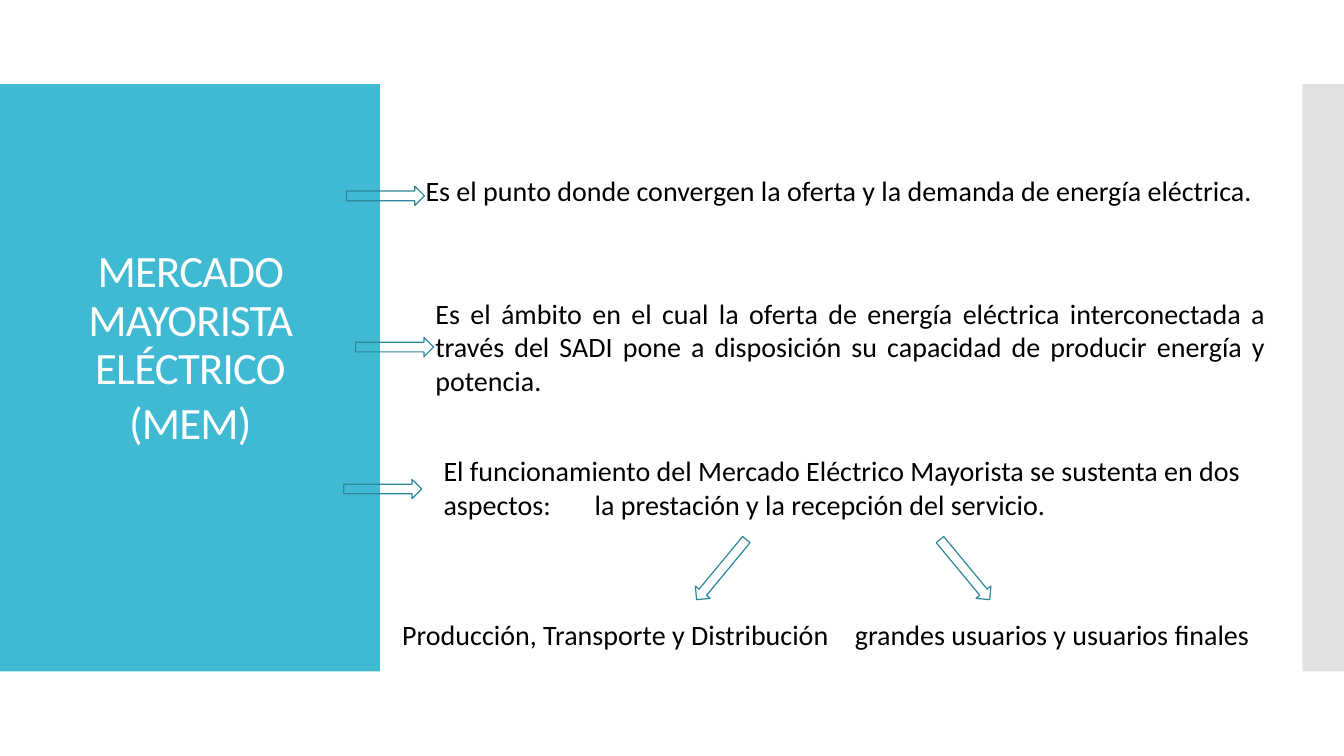
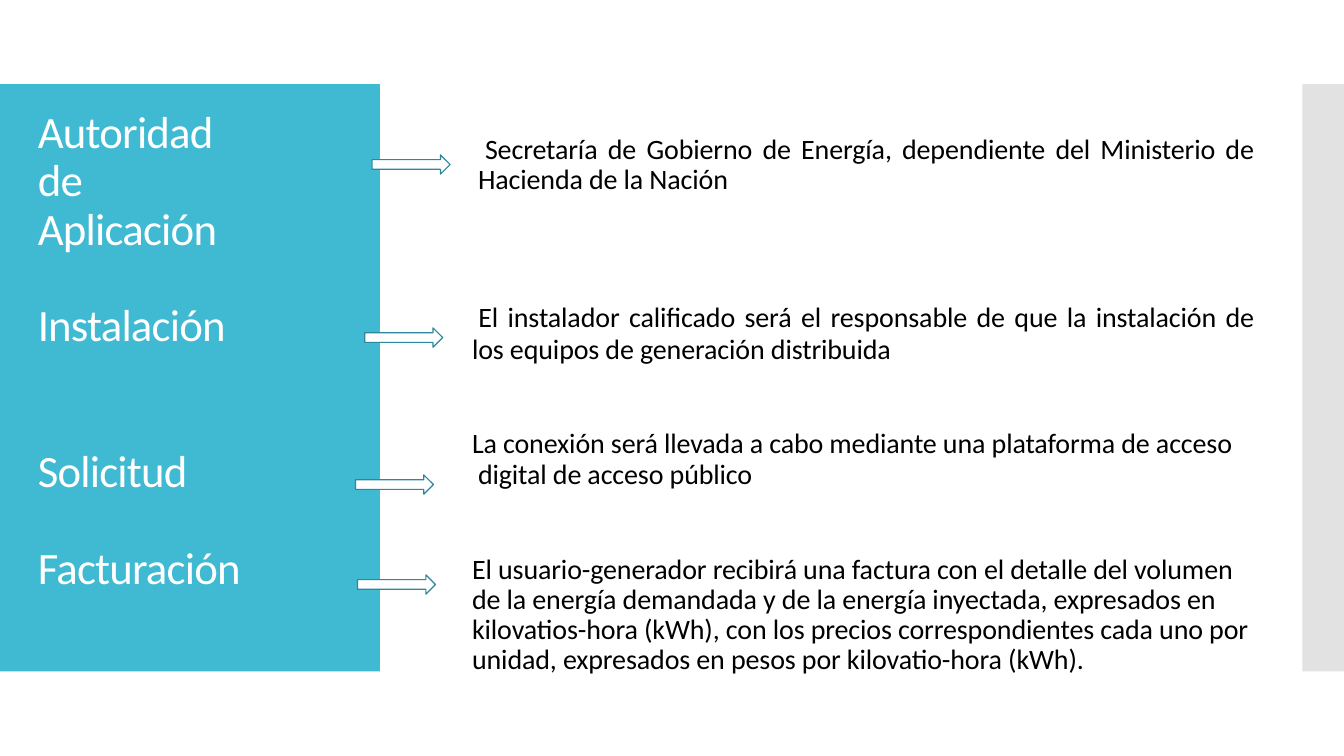
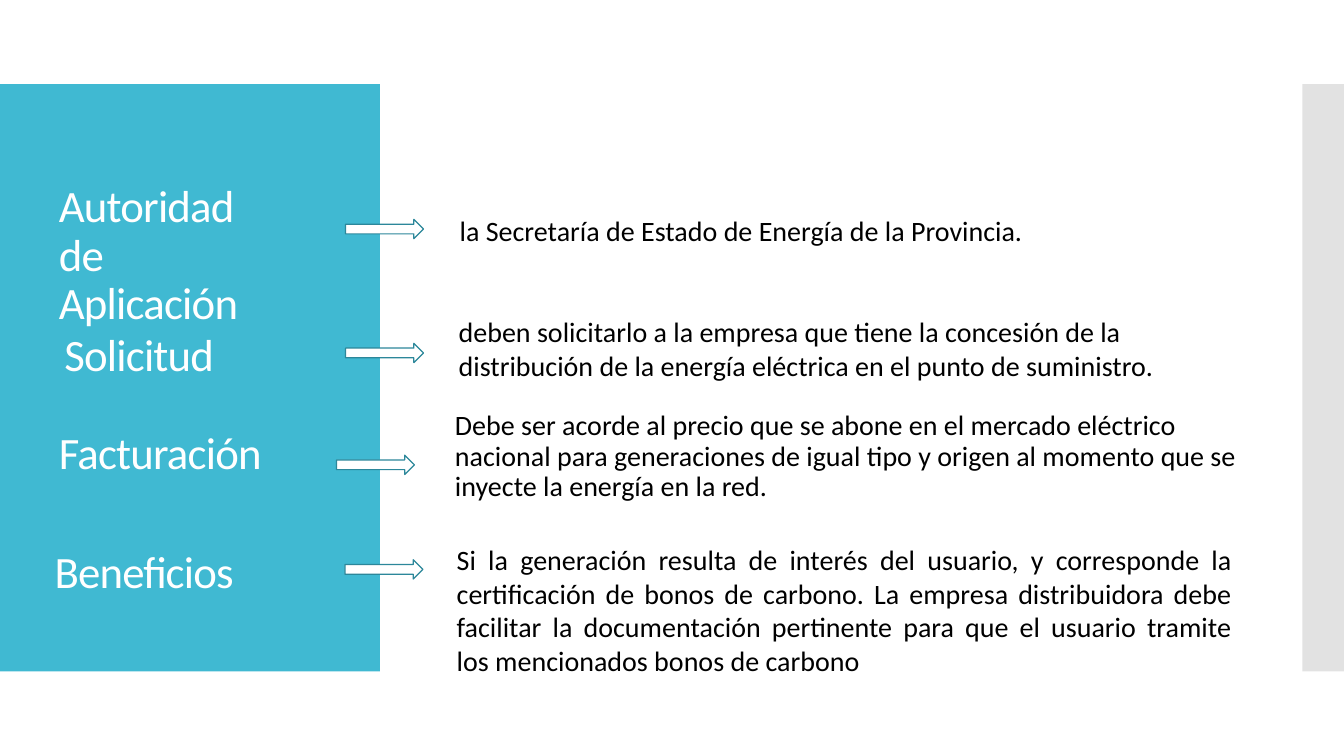
import pptx
import pptx.util
import pptx.dml.color
import pptx.enum.shapes
import pptx.enum.text
import pptx.oxml.ns
from lxml import etree

Pt = pptx.util.Pt
RGBColor = pptx.dml.color.RGBColor
SHAPE = pptx.enum.shapes.MSO_SHAPE
ALIGN = pptx.enum.text.PP_ALIGN
qn = pptx.oxml.ns.qn

TEAL = RGBColor(0x40, 0xB9, 0xD2)
DARK_TEAL = RGBColor(0x2C, 0x87, 0x9A)
GREY = RGBColor(0xC7, 0xC7, 0xC7)
WHITE = RGBColor(0xFF, 0xFF, 0xFF)
BLACK = RGBColor(0, 0, 0)

BAND_TOP, BAND_HEIGHT = 60, 419.5
ARROW_WIDTH, ARROW_HEIGHT = 55.7, 13.8
LABEL = dict(size=32, color=WHITE, spacing=-0.6, leading=Pt(34.6))
TIGHT = dict(leading=Pt(21.6))
JUSTIFIED = dict(align=ALIGN.JUSTIFY)


def add_text(slide, text, x, y, width, height, size=20, color=BLACK, align=ALIGN.LEFT,
             leading=None, before=0, spacing=0, margin=0, indent=0, tab=None):
    frame = slide.shapes.add_textbox(Pt(x), Pt(y), Pt(width), Pt(height)).text_frame
    frame.word_wrap = True
    frame.margin_left = frame.margin_top = frame.margin_right = frame.margin_bottom = 0
    frame.text = text
    for paragraph in frame.paragraphs:
        paragraph.alignment = align
        paragraph.line_spacing = leading
        paragraph.space_before = Pt(before)
        properties = paragraph._p.get_or_add_pPr()
        properties.set("marL", str(Pt(margin)))
        properties.set("indent", str(Pt(indent)))
        if tab:
            stops = etree.SubElement(properties, qn("a:tabLst"))
            etree.SubElement(stops, qn("a:tab"), pos=str(Pt(tab)), algn="l")
        for run in paragraph.runs:
            run.font.name = "Calibri"
            run.font.size = Pt(size)
            run.font.color.rgb = color
            run._r.get_or_add_rPr().set("spc", str(round(spacing * 100)))


def add_block(slide, kind, x, y, width, height, fill=None, line=None):
    block = slide.shapes.add_shape(kind, Pt(x), Pt(y), Pt(width), Pt(height))
    block.shadow.inherit = False
    if fill is None:
        block.fill.background()
    else:
        block.fill.solid()
        block.fill.fore_color.rgb = fill
    if line is None:
        block.line.fill.background()
    else:
        block.line.color.rgb = line
        block.line.width = Pt(0.84)
    return block


# Content: texts are (text, x, y, width, height, format), arrows are (x, y, rotation)
market = dict(
    arrow_fill=None,
    texts=[
        ("MERCADO MAYORISTA ELÉCTRICO\n(MEM)", 25, 177.8, 222, 145,
         dict(LABEL, align=ALIGN.CENTER, leading=0.9, before=4.8)),
        ("Es el punto donde convergen la oferta y la demanda de energía eléctrica.",
         304, 124, 620, 25, {}),
        ("Es el ámbito en el cual la oferta de energía eléctrica interconectada a través del "
         "SADI pone a disposición su capacidad de producir energía y potencia.",
         311, 211.7, 593, 73, JUSTIFIED),
        ("El funcionamiento del Mercado Eléctrico Mayorista se sustenta en dos aspectos:"
         "\tla prestación y la recepción del servicio.",
         316.8, 324, 603, 49, dict(tab=189.6)),
        ("Producción, Transporte y Distribución", 287.3, 441.4, 318, 25, {}),
        ("grandes usuarios y usuarios finales", 610.6, 441.4, 300, 25, {}),
    ],
    arrows=[(247.5, 133, 0), (254, 241, 0), (245.5, 342.4, 0),
            (487.5, 400, 129.6), (661.3, 400, 50.4)],
)

national_rules = dict(
    arrow_fill=WHITE,
    texts=[
        ("Autoridad de Aplicación", 27, 77.8, 145, 104, LABEL),
        ("Instalación", 27, 216, 180, 35, LABEL),
        ("Solicitud", 27, 320, 180, 35, LABEL),
        ("Facturación", 27, 389, 180, 35, LABEL),
        ("Secretaría de Gobierno de Energía, dependiente del Ministerio de Hacienda de la "
         "Nación", 336.5, 96, 559, 44,
         dict(TIGHT, align=ALIGN.JUSTIFY, spacing=-0.1, margin=5, indent=5)),
        ("El instalador calificado será el responsable de que la instalación de los equipos "
         "de generación distribuida", 336.5, 215.3, 559, 46,
         dict(JUSTIFIED, leading=Pt(22.8), spacing=-0.1, margin=0.7, indent=4.5)),
        ("La conexión será llevada a cabo mediante una plataforma de acceso digital de acceso "
         "público", 336.5, 306.7, 551, 44,
         dict(TIGHT, spacing=-0.1, margin=5, indent=-4.3)),
        ("El usuario-generador recibirá una factura con el detalle del volumen de la energía "
         "demandada y de la energía inyectada, expresados en kilovatios-hora (kWh), con los "
         "precios correspondientes cada uno por unidad, expresados en pesos por "
         "kilovatio-hora (kWh).", 336.5, 396, 563, 87,
         dict(TIGHT, spacing=-0.1, margin=0.7)),
    ],
    arrows=[(265.8, 110.6, 0), (260.5, 234.2, 0), (253.9, 339.2, 0), (255.4, 410.6, 0)],
)

provincial_rules = dict(
    arrow_fill=WHITE,
    texts=[
        ("Autoridad de Aplicación", 42, 131, 145, 104, LABEL),
        ("Solicitud", 46, 237, 180, 35, LABEL),
        ("Facturación", 42, 307.5, 180, 35, LABEL),
        ("Beneficios", 39, 392.4, 180, 35, LABEL),
        ("la Secretaría de Estado de Energía de la Provincia.", 328.3, 152.6, 466, 25, {}),
        ("deben solicitarlo a la empresa que tiene la concesión de la distribución de la "
         "energía eléctrica en el punto de suministro.", 327.6, 224.6, 541, 49, {}),
        ("Debe ser acorde al precio que se abone en el mercado eléctrico nacional para "
         "generaciones de igual tipo y origen al momento que se inyecte la energía en la red.",
         325, 293.8, 563, 65, TIGHT),
        ("Si la generación resulta de interés del usuario, y corresponde la certificación de "
         "bonos de carbono. La empresa distribuidora debe facilitar la documentación "
         "pertinente para que el usuario tramite los mencionados bonos de carbono",
         326.2, 387.4, 553.7, 98, JUSTIFIED),
    ],
    arrows=[(246.8, 156.7, 0), (246.8, 245.2, 0), (240.3, 325.1, 0), (246.4, 399.8, 0)],
)

# Build the slides
deck = pptx.Presentation()
deck.slide_width, deck.slide_height = Pt(960), Pt(540)

for content in (market, national_rules, provincial_rules):
    slide = deck.slides.add_slide(deck.slide_layouts[6])

    # Shared bands
    add_block(slide, SHAPE.RECTANGLE, 0, BAND_TOP, 271.4, BAND_HEIGHT, TEAL)
    edge_band = add_block(slide, SHAPE.RECTANGLE, 930.2, BAND_TOP, 29.8, BAND_HEIGHT, GREY)
    edge_color = edge_band._element.spPr.find(qn("a:solidFill"))[0]
    etree.SubElement(edge_color, qn("a:alpha"), val="50000")

    # Labels and explanations
    for text, x, y, width, height, text_format in content["texts"]:
        add_text(slide, text, x, y, width, height, **text_format)

    # Arrows
    for x, y, rotation in content["arrows"]:
        arrow = add_block(slide, SHAPE.RIGHT_ARROW, x, y, ARROW_WIDTH, ARROW_HEIGHT,
                          content["arrow_fill"], DARK_TEAL)
        arrow.rotation = rotation

deck.save("out.pptx")
